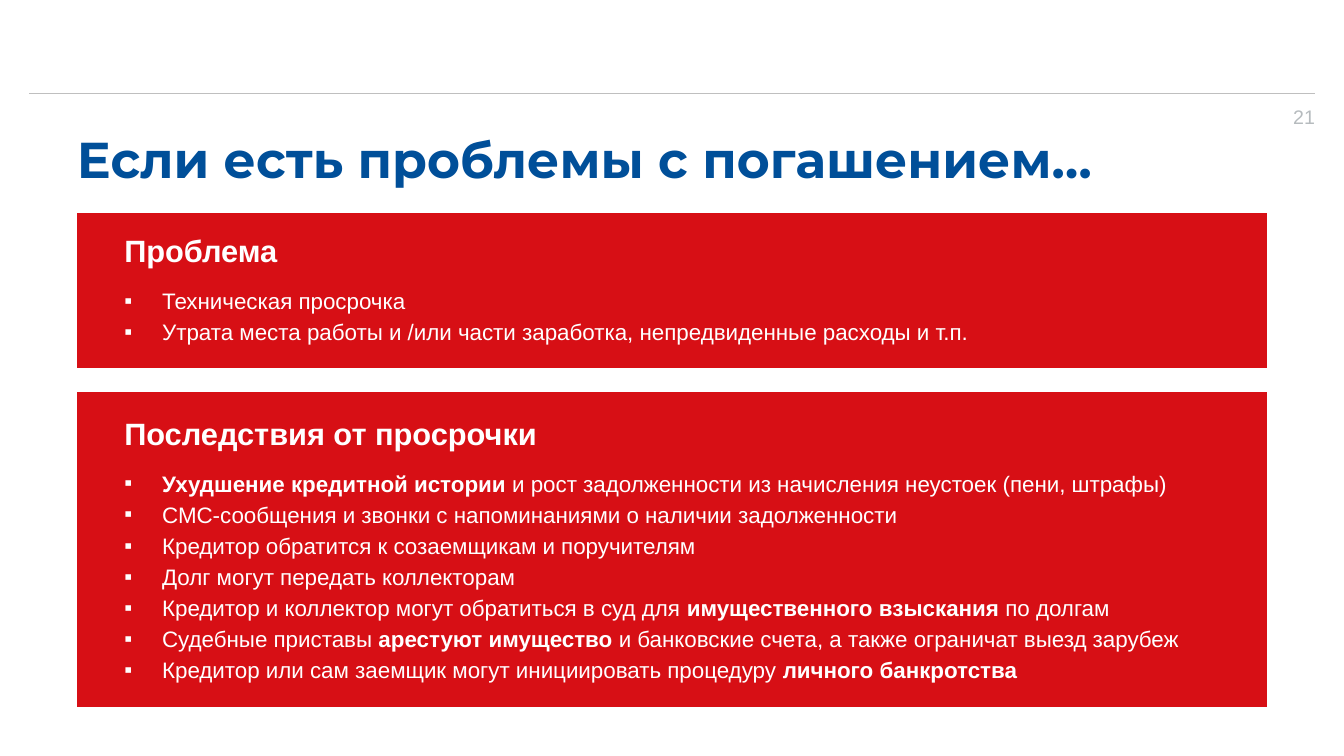
from lxml import etree
from pptx import Presentation
from pptx.dml.color import RGBColor
from pptx.enum.shapes import MSO_CONNECTOR, MSO_SHAPE
from pptx.enum.text import MSO_AUTO_SIZE, PP_ALIGN
from pptx.oxml.ns import qn
from pptx.util import Pt

LINE = MSO_CONNECTOR.STRAIGHT
PANEL = MSO_SHAPE.FLOWCHART_PROCESS
GROW = MSO_AUTO_SIZE.SHAPE_TO_FIT_TEXT
LEFT, RIGHT = PP_ALIGN.LEFT, PP_ALIGN.RIGHT


def color(code):
    return RGBColor.from_string(code)


def write(text, x, y, w, h, size=16, hue="FFFFFF", font="Arial",
          bold=False, align=LEFT, after=0, bullet=False):
    box = slide.shapes.add_textbox(Pt(x), Pt(y), Pt(w), Pt(h))
    frame = box.text_frame
    frame.word_wrap = True
    frame.auto_size = GROW
    frame.margin_left = frame.margin_right = 0
    frame.margin_top = frame.margin_bottom = 0
    for i, row in enumerate(text.split("\n")):
        para = frame.paragraphs[0] if i == 0 else frame.add_paragraph()
        if bullet:
            props = para._p.get_or_add_pPr()
            props.set("marL", str(Pt(27)))
            props.set("indent", str(-Pt(27)))
            etree.SubElement(props, qn("a:buFont")).set("typeface", "Arial")
            etree.SubElement(props, qn("a:buChar")).set("char", "▪")
        para.alignment = align
        para.space_after = Pt(after)
        for j, part in enumerate(row.split("*")):
            if part:
                run = para.add_run()
                run.text = part
                run.font.name = font
                run.font.size = Pt(size)
                run.font.bold = bold or j % 2 == 1
                run.font.color.rgb = color(hue)


deck = Presentation()
deck.slide_width, deck.slide_height = Pt(960), Pt(540)
slide = deck.slides.add_slide(deck.slide_layouts[6])

rule = slide.shapes.add_connector(LINE, Pt(20.9), Pt(67), Pt(939.6), Pt(67))
rule.line.color.rgb = color("BFBFBF")
rule.line.width = Pt(1)
etree.SubElement(rule._element.spPr, qn("a:effectLst"))

write("Если есть проблемы с погашением…", 55, 91.4, 780, 44,
      size=36, hue="004F99", font="Montserrat", bold=True)

panels = [
    (152, 110.8, 13.6, "Проблема", """Техническая просрочка
Утрата места работы и /или части заработка, непредвиденные расходы и т.п."""),
    (280, 224.8, 16, "Последствия от просрочки",
     """*Ухудшение кредитной истории *и рост задолженности из начисления неустоек (пени, штрафы)
СМС-сообщения и звонки с напоминаниями о наличии задолженности
Кредитор обратится к созаемщикам и поручителям
Долг могут передать коллекторам
Кредитор и коллектор могут обратиться в суд для *имущественного взыскания *по долгам
Судебные приставы *арестуют имущество *и банковские счета, а также ограничат выезд зарубеж
Кредитор или сам заемщик могут инициировать процедуру *личного банкротства*"""),
]
for top, high, pad, head, items in panels:
    panel = slide.shapes.add_shape(PANEL, Pt(55), Pt(top), Pt(850), Pt(high))
    panel.shadow.inherit = False
    panel.fill.solid()
    panel.fill.fore_color.rgb = color("D70F15")
    panel.line.fill.background()
    write(head, 88.8, top + pad, 349, 26.6, size=22, bold=True, after=6)
    rows = items.count("\n") + 1
    write(items, 88.8, top + pad + 39.6, 780, rows * 22, after=3, bullet=True)

write("21", 904.3, 75, 35, 17, size=14, hue="B6BBBE", align=RIGHT, after=9)

deck.save("out.pptx")
